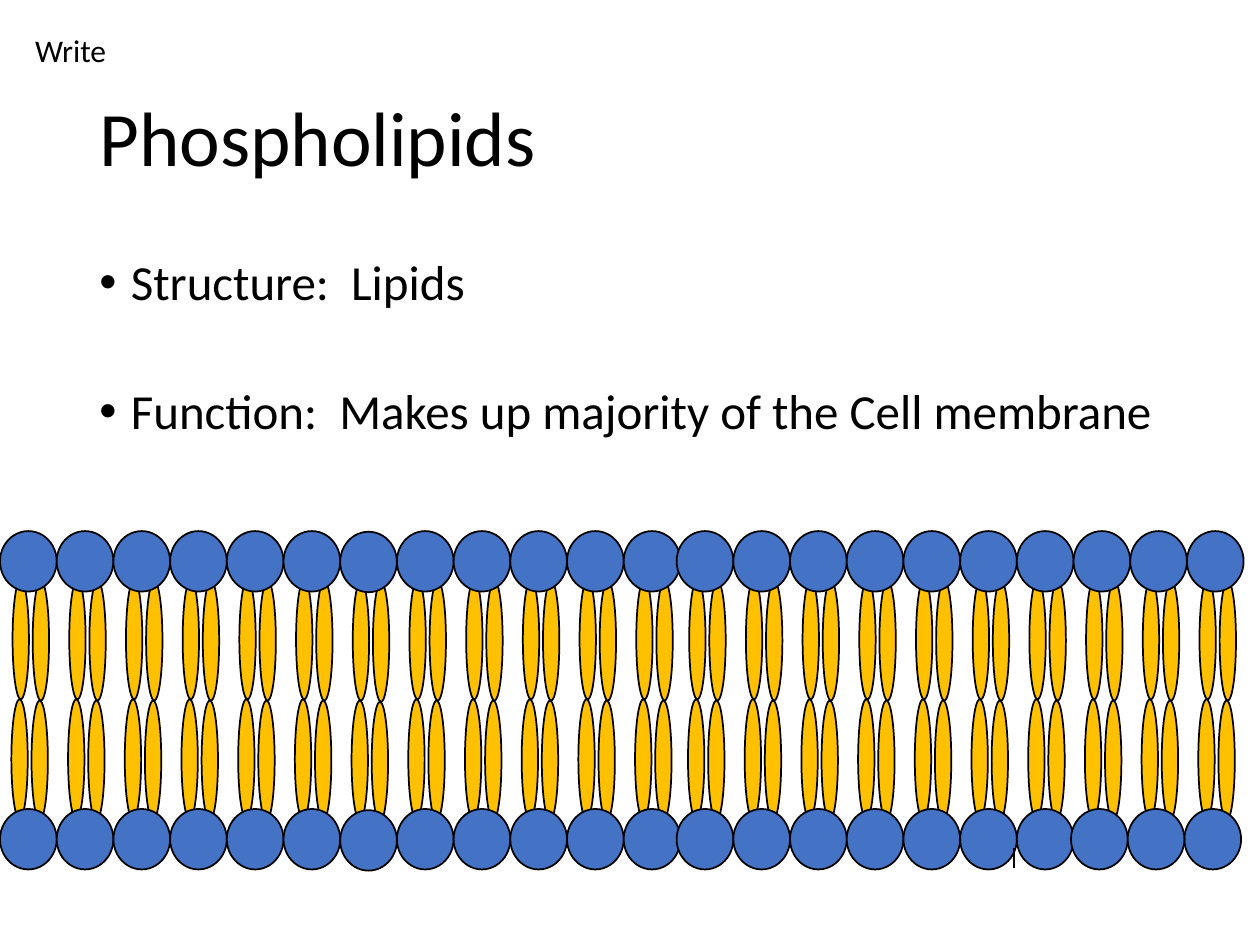
from dataclasses import dataclass

import pptx
import pptx.dml.color
import pptx.enum.shapes
import pptx.enum.text
import pptx.oxml.ns
import pptx.util
from pptx.util import Inches


@dataclass(frozen=True)
class Theme:
    font: str = "Calibri"
    ink: str = "000000"
    head: str = "4472C4"
    tail: str = "FFC000"
    title_size: int = 44
    body_size: int = 28
    note_size: int = 18
    outline: float = 1


THEME = Theme()
PITCH = 0.45
COLUMNS = 22
LEFT_GROUP = 12
RIGHT_GROUP_LEFT = 5.37
FRONT_COLUMNS = (20, 6)
SHIFTED_HEADS = 3


def color(value):
    return pptx.dml.color.RGBColor.from_string(value)


def add_run(paragraph, text, size):
    run = paragraph.add_run()
    run.text = text
    run.font.name = THEME.font
    run.font.size = pptx.util.Pt(size)
    run.font.color.rgb = color(THEME.ink)


def add_text_frame(slide, left, top, width, height):
    box = slide.shapes.add_textbox(Inches(left), Inches(top), Inches(width), Inches(height))
    box.text_frame.word_wrap = True
    return box.text_frame


def add_title(slide, text):
    frame = add_text_frame(slide, 0.69, 0.4, 8.62, 1.45)
    frame.vertical_anchor = pptx.enum.text.MSO_ANCHOR.MIDDLE
    frame.paragraphs[0].line_spacing = 0.9
    add_run(frame.paragraphs[0], text, THEME.title_size)


def format_bullet(paragraph):
    paragraph.line_spacing = 0.9
    paragraph.space_before = pptx.util.Pt(10)
    properties = paragraph._p.get_or_add_pPr()
    properties.set("marL", str(Inches(0.25)))
    properties.set("indent", str(Inches(-0.25)))
    for tag, attribute, value in (("a:buFont", "typeface", "Arial"), ("a:buChar", "char", "•")):
        element = pptx.oxml.xmlchemy.OxmlElement(tag)
        element.set(attribute, value)
        properties.append(element)


def add_body(slide):
    frame = add_text_frame(slide, 0.69, 2, 8.62, 4.76)
    structure = frame.paragraphs[0]
    format_bullet(structure)
    add_run(structure, "Structure:  Lipids", THEME.body_size)
    structure.add_line_break()
    line_break = structure._p.find(pptx.oxml.ns.qn("a:br"))
    break_format = pptx.oxml.xmlchemy.OxmlElement("a:rPr")
    break_format.set("sz", str(THEME.body_size * 100))
    line_break.append(break_format)
    function = frame.add_paragraph()
    format_bullet(function)
    add_run(function, "Function:  Makes up majority of the Cell membrane", THEME.body_size)


def add_note(slide, text):
    frame = add_text_frame(slide, 0.18, 0.2, 3.33, 0.4)
    frame.auto_size = pptx.enum.text.MSO_AUTO_SIZE.SHAPE_TO_FIT_TEXT
    add_run(frame.paragraphs[0], text, THEME.note_size)


def add_ellipse(slide, left, top, width, height, fill, rotation):
    shape = slide.shapes.add_shape(
        pptx.enum.shapes.MSO_SHAPE.OVAL,
        Inches(left), Inches(top), Inches(width), Inches(height))
    shape.rotation = rotation
    shape.shadow.inherit = False
    shape.fill.solid()
    shape.fill.fore_color.rgb = color(fill)
    shape.line.color.rgb = color(THEME.ink)
    shape.line.width = pptx.util.Pt(THEME.outline)


def add_phospholipid(slide, tails, head, rotation=0):
    """Draw two tails and then the head that covers their ends."""
    for left, top in tails:
        add_ellipse(slide, left, top, 0.13, 0.95, THEME.tail, rotation)
    add_ellipse(slide, *head, 0.45, 0.48, THEME.head, rotation)


def add_bilayer_column(slide, index):
    if index < LEFT_GROUP:
        left = index * PITCH
    else:
        left = RIGHT_GROUP_LEFT + (index - LEFT_GROUP) * PITCH
    lower_left = left - 0.02 if index >= COLUMNS - SHIFTED_HEADS else left
    drop = 0.01 if index == 6 else 0
    add_phospholipid(
        slide, [(left + 0.1, 4.6 + drop), (left + 0.26, 4.61 + drop)], (left, 4.215 + drop / 2))
    add_phospholipid(
        slide, [(left + 0.25, 5.56 + drop), (left + 0.09, 5.55 + drop)],
        (lower_left, 6.42 + drop), 180)


def add_tick(slide):
    tick = slide.shapes.add_connector(
        pptx.enum.shapes.MSO_CONNECTOR.STRAIGHT,
        Inches(8.05), Inches(6.89), Inches(8.05), Inches(6.73))
    tick.line.color.rgb = color(THEME.ink)
    tick.line.width = pptx.util.Pt(THEME.outline)
    tick._element.spPr.append(pptx.oxml.xmlchemy.OxmlElement("a:effectLst"))


def add_membrane(slide):
    for index in range(COLUMNS):
        if index not in FRONT_COLUMNS:
            add_bilayer_column(slide, index)
    add_tick(slide)
    for index in FRONT_COLUMNS:
        add_bilayer_column(slide, index)


def main():
    presentation = pptx.Presentation()
    presentation.slide_width = Inches(10)
    presentation.slide_height = Inches(7.5)
    slide = presentation.slides.add_slide(presentation.slide_layouts[6])
    add_title(slide, "Phospholipids")
    add_body(slide)
    add_membrane(slide)
    add_note(slide, "Write")
    presentation.save("out.pptx")


if __name__ == "__main__":
    main()
